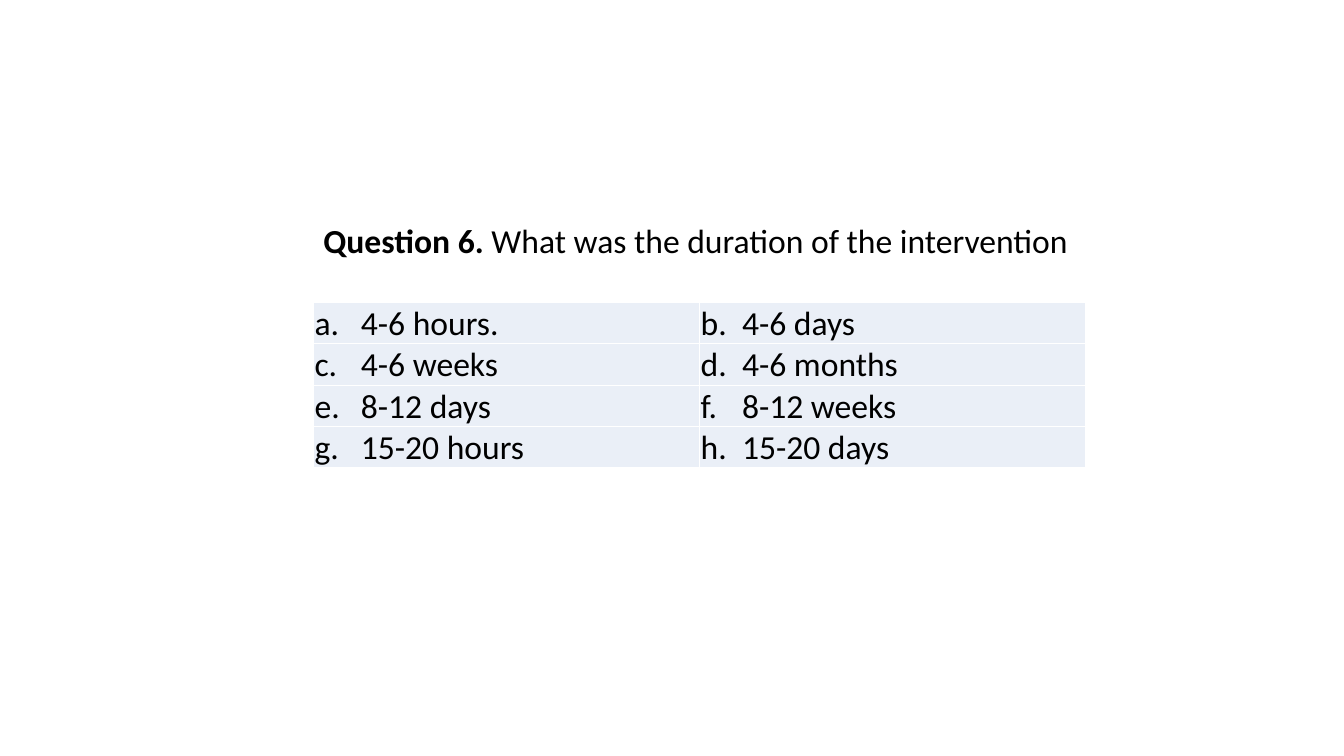
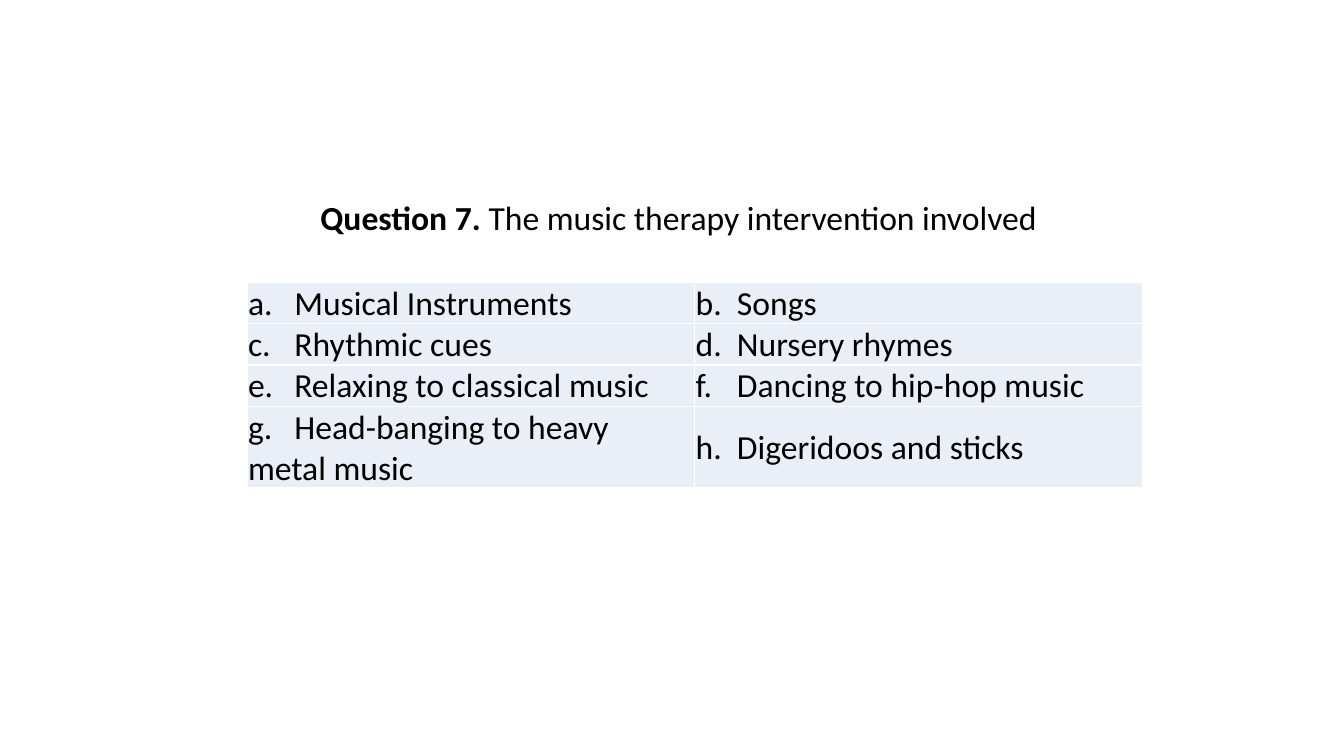
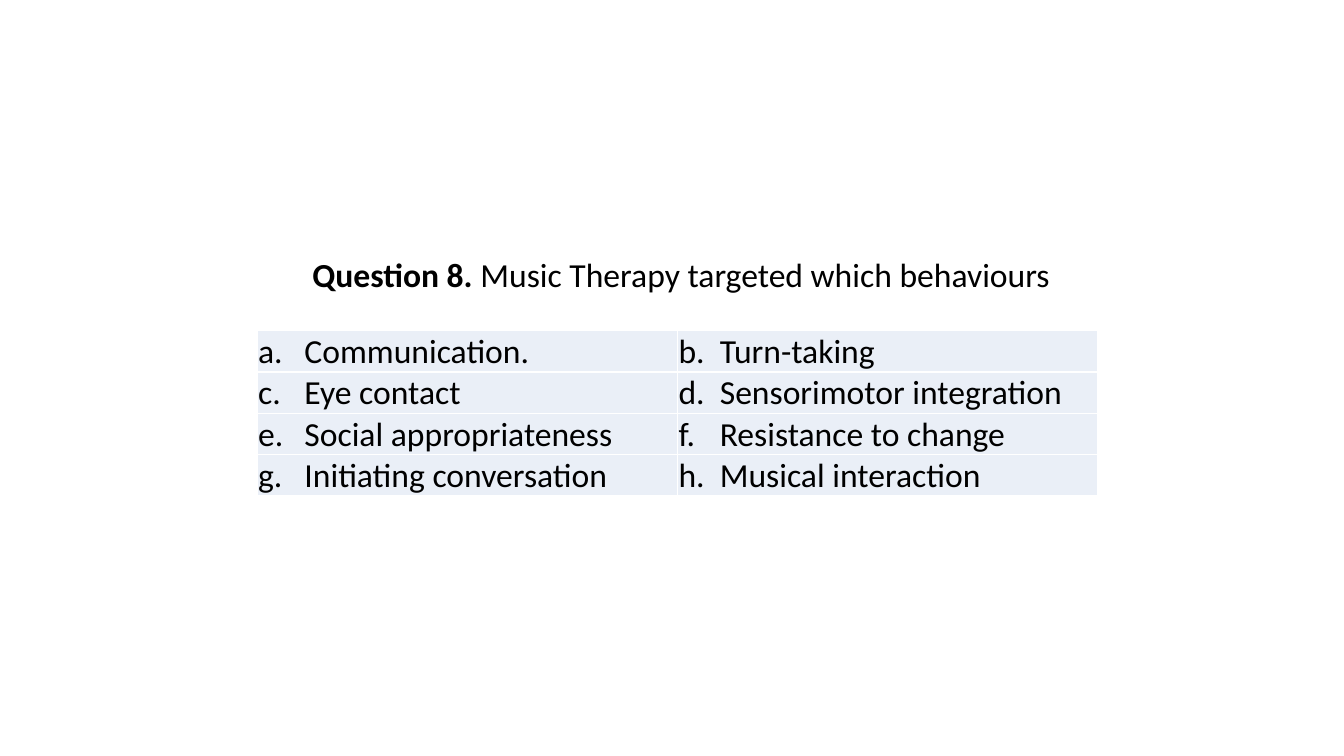
from dataclasses import dataclass

from lxml.etree import SubElement
from pptx import Presentation
from pptx.dml.color import RGBColor
from pptx.enum.text import MSO_ANCHOR, MSO_AUTO_SIZE
from pptx.oxml import parse_xml
from pptx.oxml.ns import nsdecls, qn
from pptx.slide import Slide
from pptx.table import _Cell as Cell
from pptx.text.text import _Paragraph as Paragraph
from pptx.util import Pt

EMU_PER_PX = 9144  # 100 px to the inch
LETTERS = "abcdefgh"
COLUMNS = 2
HEADING_HEIGHT = 51
ROW_HEIGHT = 40
CELL_INSET = 1
ANSWER_TABS = (46, 41)  # one for each column


@dataclass(frozen=True)
class Theme:
    font: str = "Calibri"
    size: int = 24
    text: str = "000000"
    cell: str = "EAEFF7"
    border: str = "FFFFFF"
    border_width: int = 1


THEME = Theme()


@dataclass(frozen=True)
class Box:
    left: int
    top: int
    width: int


@dataclass(frozen=True)
class Question:
    number: int
    wording: str
    heading: Box
    table: Box
    answers: tuple[str, ...]
    last_row_height: int = ROW_HEIGHT


QUESTIONS = (
    Question(
        6, "What was the duration of the intervention",
        Box(311, 210, 766), Box(311, 300, 766),
        ("4-6 hours.", "4-6 days", "4-6 weeks", "4-6 months",
         "8-12 days", "8-12 weeks", "15-20 hours", "15-20 days"),
    ),
    Question(
        7, "The music therapy intervention involved",
        Box(308, 188, 738), Box(245, 280, 888),
        ("Musical Instruments", "Songs", "Rhythmic cues", "Nursery rhymes",
         "Relaxing to classical music", "Dancing to hip-hop music",
         "Head-banging to heavy metal music", "Digeridoos and sticks"),
        last_row_height=81,
    ),
    Question(
        8, "Music Therapy targeted which behaviours",
        Box(300, 244, 759), Box(255, 328, 834),
        ("Communication.", "Turn-taking", "Eye contact", "Sensorimotor integration",
         "Social appropriateness", "Resistance to change",
         "Initiating conversation", "Musical interaction"),
    ),
)


def px(length: int) -> int:
    return length * EMU_PER_PX


def add_text(paragraph: Paragraph, text: str, *, bold: bool = False) -> None:
    run = paragraph.add_run()
    run.text = text
    font = run.font
    font.name, font.size, font.bold = THEME.font, Pt(THEME.size), bold
    font.color.rgb = RGBColor.from_string(THEME.text)


def add_tab_stop(paragraph: Paragraph, position: int) -> None:
    tab_list = SubElement(paragraph._p.get_or_add_pPr(), qn("a:tabLst"))
    SubElement(tab_list, qn("a:tab"), pos=str(px(position)), algn="l")


def style_cell(cell: Cell) -> None:
    cell.fill.solid()
    cell.fill.fore_color.rgb = RGBColor.from_string(THEME.cell)
    cell.vertical_anchor = MSO_ANCHOR.MIDDLE
    cell.margin_left = cell.margin_right = cell.margin_top = px(CELL_INSET)
    cell.margin_bottom = 0
    properties = cell._tc.get_or_add_tcPr()
    # Border lines must stand before the fill, in this order.
    for index, side in enumerate(("lnL", "lnR", "lnT", "lnB")):
        properties.insert(index, parse_xml(
            f'<a:{side} {nsdecls("a")} w="{Pt(THEME.border_width)}"><a:solidFill>'
            f'<a:srgbClr val="{THEME.border}"/></a:solidFill></a:{side}>'
        ))


def add_heading(slide: Slide, question: Question) -> None:
    box = question.heading
    shape = slide.shapes.add_textbox(
        px(box.left), px(box.top), px(box.width), px(HEADING_HEIGHT))
    frame = shape.text_frame
    frame.word_wrap = False
    frame.auto_size = MSO_AUTO_SIZE.SHAPE_TO_FIT_TEXT
    paragraph = frame.paragraphs[0]
    paragraph.line_spacing = 1.07
    paragraph.space_after = Pt(6)
    add_text(paragraph, f"Question {question.number}.", bold=True)
    add_text(paragraph, f" {question.wording}")


def add_answers(slide: Slide, question: Question) -> None:
    """Letter the answers row by row in a two-column table."""
    box = question.table
    row_count = len(question.answers) // COLUMNS
    table = slide.shapes.add_table(
        row_count, COLUMNS, px(box.left), px(box.top),
        px(box.width), px(ROW_HEIGHT * row_count)).table
    table.first_row = table.horz_banding = False
    table.rows[row_count - 1].height = px(question.last_row_height)
    for index, (letter, answer) in enumerate(zip(LETTERS, question.answers)):
        row, column = divmod(index, COLUMNS)
        cell = table.cell(row, column)
        style_cell(cell)
        paragraph = cell.text_frame.paragraphs[0]
        add_tab_stop(paragraph, ANSWER_TABS[column])
        add_text(paragraph, f"{letter}.\t{answer}")


def main() -> None:
    presentation = Presentation()
    presentation.slide_width, presentation.slide_height = px(1333), px(750)
    blank_layout = presentation.slide_layouts[6]
    for question in QUESTIONS:
        slide = presentation.slides.add_slide(blank_layout)
        add_heading(slide, question)
        add_answers(slide, question)
    presentation.save("out.pptx")


if __name__ == "__main__":
    main()
